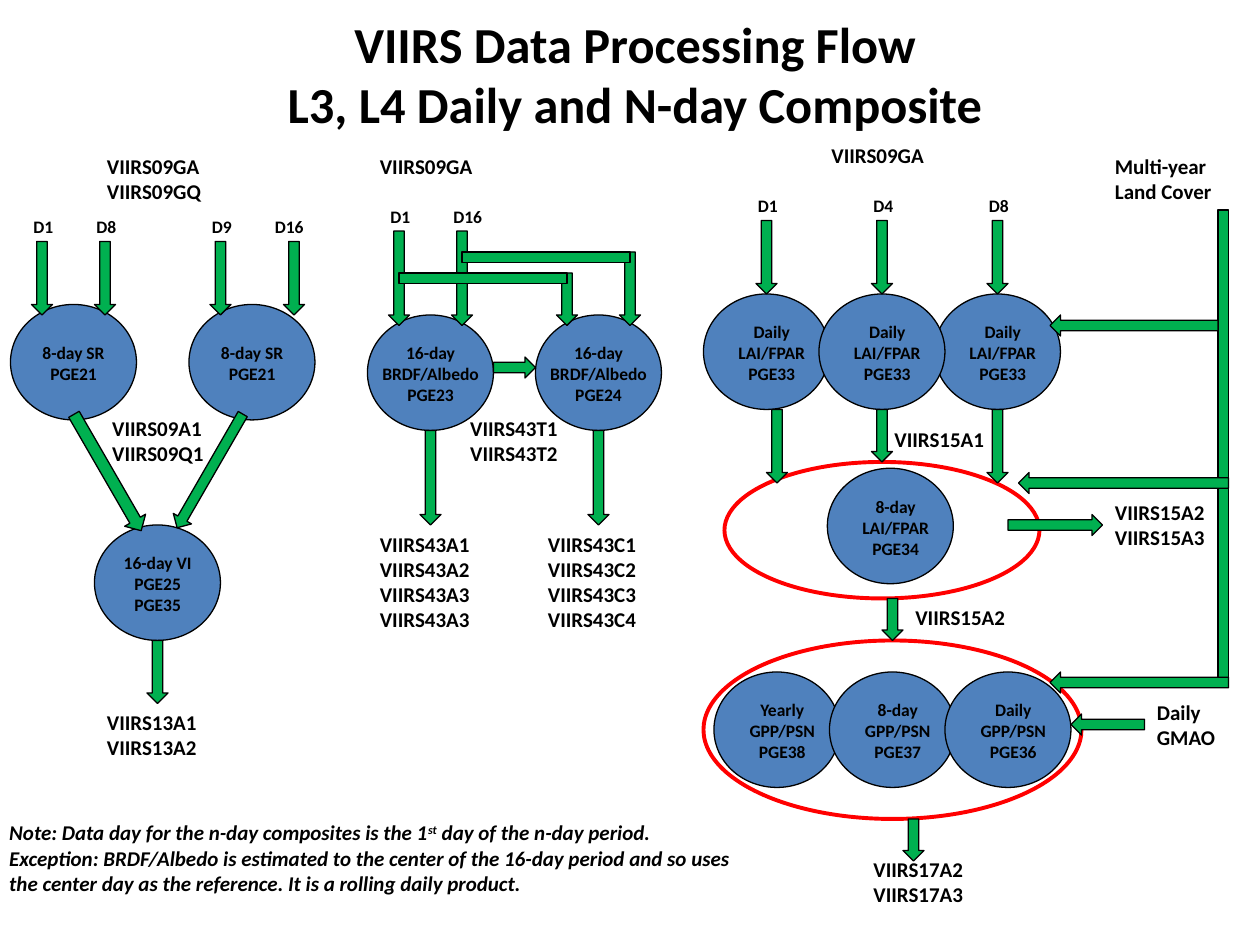
from pptx import Presentation
from pptx import util as u
from pptx.dml.color import RGBColor
from pptx.enum import shapes, text

PX = 7620  # EMU per px, 120 px to the inch
BLACK, BLUE, GREEN, RED = "000000", "4F81BD", "00B050", "FF0000"
FONT = "Calibri"
DOWN, RIGHT = shapes.MSO_SHAPE.DOWN_ARROW, shapes.MSO_SHAPE.RIGHT_ARROW

TITLE = "VIIRS Data Processing Flow\vL3, L4 Daily and N-day Composite"

# Processes: left, top, wording, lines shown, text inset x, text width
PROCESSES = [
    (10, 290, "8-day SR PGE21", 2, 10, 100),
    (180, 290, "8-day SR PGE21", 2, 10, 100),
    (90, 500, "16-day VI PGE25\nPGE35", 3, 10, 100),
    (350, 300, "16-day BRDF/Albedo PGE23", 3, -10, 140),
    (510, 300, "16-day BRDF/Albedo PGE24", 3, -10, 140),
    (670, 280, "Daily LAI/FPAR\nPGE33", 3, 10, 110),
    (890, 280, "Daily LAI/FPAR\nPGE33", 3, 10, 110),
    (788, 446, "8-day LAI/FPAR\nPGE34", 3, 10, 110),
    (780, 280, "Daily LAI/FPAR\nPGE33", 3, 10, 110),
    (680, 640, "Yearly GPP/PSN\nPGE38", 3, 10, 110),
    (790, 640, "8-day GPP/PSN\nPGE37", 3, 10, 110),
    (900, 640, "Daily GPP/PSN\nPGE36", 3, 10, 110),
]

# Red rings: left, top, width, height
RINGS = [(690, 440, 300, 130), (670, 610, 360, 170)]

# Down arrows, 20 px wide: top, height, lefts
DOWN_ARROWS = [
    (230, 70, [30, 90, 200, 270]),
    (610, 60, [140]),
    (220, 90, [370, 430]),
    (410, 90, [400, 560]),
    (260, 50, [530]),
    (240, 70, [590]),
    (210, 70, [720, 830, 940]),
    (390, 70, [730, 940]),
    (390, 50, [830]),
    (570, 40, [840]),
    (780, 40, [860]),
]
# Slanted arrows: left, top, width, height, rotation
SLANTED_ARROWS = [(190, 386, 20, 125, 30), (91, 386, 23, 128, 330)]
# Bars: left, top, width, height
BARS = [(380, 260, 160, 10), (440, 240, 160, 10), (1160, 200, 10, 450)]
# Horizontal arrows, 20 px high: left, top, width, rotation
SIDE_ARROWS = [
    (470, 340, 40, 0), (960, 490, 90, 0),
    (1020, 680, 70, 180), (1000, 300, 160, 180),
    (970, 450, 200, 180), (1000, 640, 170, 180),
]

# Day marks: left, top, wording
DAYS = [
    (20, 200, "D1"), (80, 200, "D8"), (190, 200, "D9"), (250, 200, "D16"),
    (360, 190, "D1"), (420, 190, "D16"),
    (710, 180, "D1"), (820, 180, "D4"), (930, 180, "D8"),
]
# Data sets: left, top, width, wording, lines shown
DATA_SETS = [
    (90, 140, 130, "VIIRS09GA\nVIIRS09GQ", 2),
    (95, 390, 120, "VIIRS09A1\nVIIRS09Q1", 2),
    (90, 670, 130, "VIIRS13A1\nVIIRS13A2", 2),
    (350, 140, 130, "VIIRS09GA", 1),
    (350, 500, 130, "VIIRS43A1\nVIIRS43A2\nVIIRS43A3\nVIIRS43A3", 4),
    (510, 500, 130, "VIIRS43C1\nVIIRS43C2\nVIIRS43C3\nVIIRS43C4", 4),
    (436, 390, 130, "VIIRS43T1\nVIIRS43T2", 2),
    (780, 130, 130, "VIIRS09GA", 1),
    (840, 400, 120, "VIIRS15A1", 1),
    (860, 570, 120, "VIIRS15A2", 1),
    (1050, 470, 120, "VIIRS15A2\nVIIRS15A3", 2),
    (820, 810, 120, "VIIRS17A2 VIIRS17A3", 2),
    (1090, 660, 91, "Daily GMAO", 2),
    (1050, 140, 150, "Multi-year\nLand Cover", 2),
]
# Note paragraphs as runs of wording and superscript flag
NOTE = [
    [("Note: Data day for the n-day composites is the 1", False), ("st", True),
     (" day of the n-day period.", False)],
    [("Exception: BRDF/Albedo is estimated to the center of the 16-day period "
      "and so uses the center day as the reference. It is a rolling daily "
      "product.", False)],
]


def color(value):
    return RGBColor.from_string(value)


def box(*lengths):
    return [round(length * PX) for length in lengths]


def style_font(font, size, **extra):
    values = {"name": FONT, "size": u.Pt(size), "bold": True, **extra}
    for name, value in values.items():
        setattr(font, name, value)
    font.color.rgb = color(BLACK)


def add_shape(parent, kind, place, fill=GREEN, line=BLACK, weight=0.75, turn=0):
    shape = parent.add_shape(kind, *box(*place))
    shape.shadow.inherit = False
    shape.rotation = turn
    if fill:
        shape.fill.solid()
        shape.fill.fore_color.rgb = color(fill)
    else:
        shape.fill.background()
    shape.line.color.rgb = color(line)
    shape.line.width = u.Pt(weight)


def add_text(parent, left, top, width, lines, size, wording="", align=None):
    height = lines * size * 2.03 + 12
    frame = parent.add_textbox(*box(left, top, width, height)).text_frame
    frame.word_wrap = True
    frame.auto_size = text.MSO_AUTO_SIZE.SHAPE_TO_FIT_TEXT
    frame.text = wording
    for paragraph in frame.paragraphs:
        paragraph.alignment = align
        for run in paragraph.runs:
            style_font(run.font, size)
    return frame


presentation = Presentation()
presentation.slide_width, presentation.slide_height = box(1200, 900)
slide = presentation.slides.add_slide(presentation.slide_layouts[5])
canvas = slide.shapes

# Title
title = canvas.title
title.left, title.top, title.width, title.height = box(150, 10, 910, 120)
title.text_frame.text = TITLE
title.text_frame.vertical_anchor = text.MSO_ANCHOR.MIDDLE
heading = title.text_frame.paragraphs[0]
heading.alignment = text.PP_ALIGN.CENTER
for run in heading.runs:
    style_font(run.font, 28.8)

# Process circles and red rings
for left, top, wording, lines, inset, width in PROCESSES:
    group = canvas.add_group_shape().shapes
    add_shape(group, shapes.MSO_SHAPE.OVAL, (left, top, 120, 110), BLUE)
    text_top = top + (30 if lines == 2 else 20)
    add_text(group, left + inset, text_top, width, lines, 10, wording,
             text.PP_ALIGN.CENTER)
for place in RINGS:
    add_shape(canvas, shapes.MSO_SHAPE.OVAL, place, None, RED, 2.25)

# Arrows and bars
for top, height, lefts in DOWN_ARROWS:
    for left in lefts:
        add_shape(canvas, DOWN, (left, top, 20, height))
for *place, turn in SLANTED_ARROWS:
    add_shape(canvas, DOWN, place, turn=turn)
for place in BARS:
    add_shape(canvas, shapes.MSO_SHAPE.RECTANGLE, place)
for left, top, width, turn in SIDE_ARROWS:
    add_shape(canvas, RIGHT, (left, top, width, 20), turn=turn)

# Labels
for left, top, wording in DAYS:
    add_text(canvas, left, top, 60 if len(wording) > 2 else 50, 1, 10, wording)
for left, top, width, wording, lines in DATA_SETS:
    add_text(canvas, left, top, width, lines, 12, wording)

# Note
note = add_text(canvas, -3, 775, 733, 3, 12)
note_paragraphs = [note.paragraphs[0], note.add_paragraph()]
for paragraph, runs in zip(note_paragraphs, NOTE):
    for wording, raised in runs:
        run = paragraph.add_run()
        run.text = wording
        style_font(run.font, 12, italic=True)
        if raised:
            run._r.get_or_add_rPr().set("baseline", "30000")

presentation.save("out.pptx")
